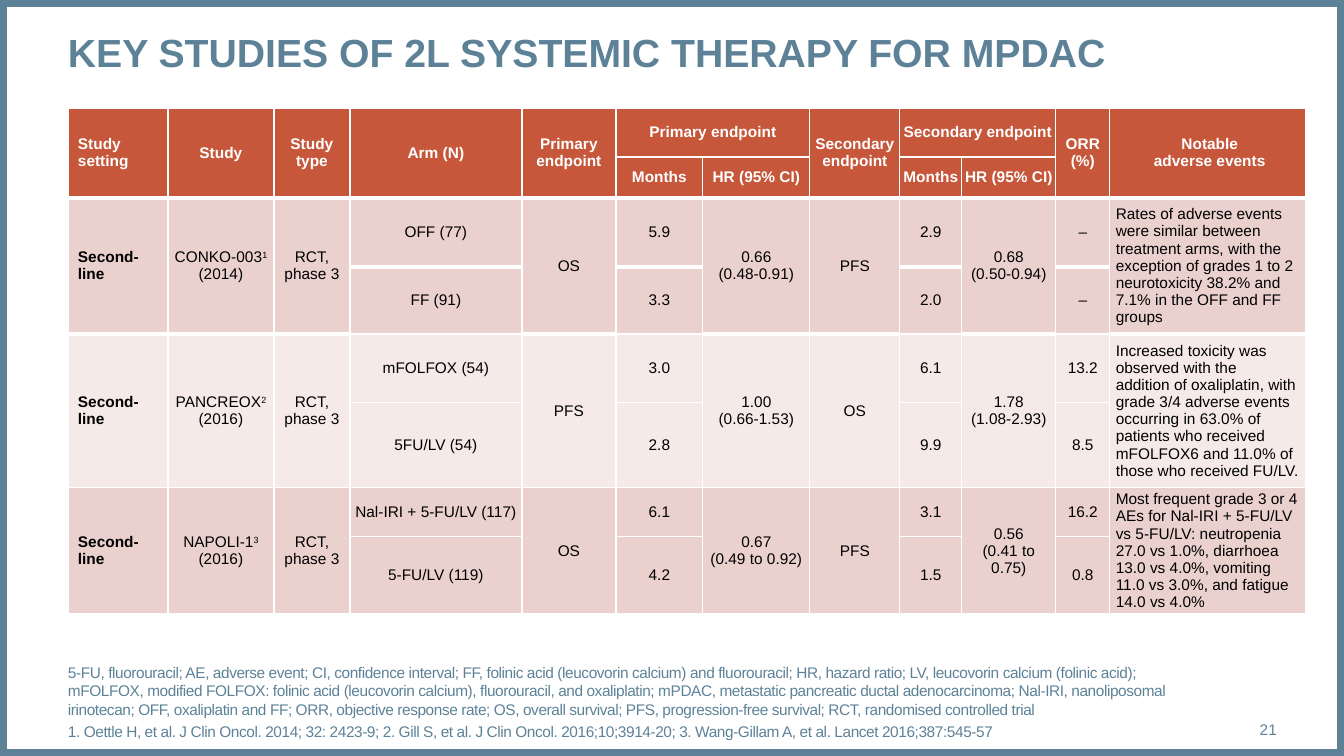
import pptx
import pptx.dml.color
import pptx.enum.shapes
import pptx.enum.text
import pptx.oxml.ns
import pptx.util
from lxml import etree

PX = 914400 / 100.8
COLORS = {"steel": "5D8298", "rust": "C6573B", "rose": "EAD1CE", "blush": "F5EAE8",
          "white": "FFFFFF", "black": "000000"}
FONT = "Arial"
ALIGN = pptx.enum.text.PP_ALIGN
ANCHOR = pptx.enum.text.MSO_ANCHOR

COLUMN_WIDTHS = [100, 106, 76, 172, 94, 87, 107, 90, 62, 94, 54, 196]
ROW_HEIGHTS = [49, 41, 69, 67, 69, 85, 49, 77]
SPLIT_COLUMNS = (3, 5, 8, 10)
HEADER_PAIRS = (5, 8)
HEADER = ["Study setting", "Study", "Study\ntype", "Arm (N)", "Primary\nendpoint",
          "Primary endpoint", "", "Secondary\nendpoint", "Secondary endpoint", "",
          "ORR\n(%)", "Notable\nadverse events"]
SUBHEADER = {5: "Months", 6: "HR (95% CI)", 8: "Months", 9: "HR (95% CI)"}
STUDIES = [
    (["Second-\nline", "CONKO-003^1^\n(2014)", "RCT,\nphase 3", "OFF (77)", "OS", "5.9",
      "0.66|(0.48-0.91)", "PFS", "2.9", "0.68|(0.50-0.94)", "–",
      "Rates of adverse events were similar between|treatment arms, with the exception of "
      "grades 1 to 2 neurotoxicity 38.2% and 7.1% in the OFF and FF groups"],
     ["FF (91)", "3.3", "2.0", "–"]),
    (["Second-\nline", "PANCREOX^2^|(2016)", "RCT,\nphase 3", "mFOLFOX (54)", "PFS", "3.0",
      "1.00|(0.66-1.53)", "OS", "6.1", "1.78|(1.08-2.93)", "13.2",
      "Increased toxicity was observed with the|addition of oxaliplatin, with grade 3/4 "
      "adverse events occurring in 63.0% of patients who received|mFOLFOX6 and 11.0% of "
      "those who received FU/LV."],
     ["5FU/LV (54)", "2.8", "9.9", "8.5"]),
    (["Second-\nline", "NAPOLI-1^3^\n(2016)", "RCT,\nphase 3", "Nal-IRI + 5-FU/LV (117)",
      "OS", "6.1", "0.67\n(0.49 to 0.92)", "PFS", "3.1", "0.56\n(0.41 to 0.75)", "16.2",
      "Most frequent grade 3 or 4 AEs for Nal-IRI + 5-FU/LV vs 5-FU/LV: neutropenia 27.0 vs "
      "1.0%, diarrhoea 13.0 vs 4.0%, vomiting 11.0 vs 3.0%, and fatigue 14.0 vs 4.0%"],
     ["5-FU/LV (119)", "4.2", "1.5", "0.8"]),
]
NOTES = (
    "5-FU, fluorouracil; AE, adverse event; CI, confidence interval; FF, folinic acid "
    "(leucovorin calcium) and fluorouracil; HR, hazard ratio; LV, leucovorin calcium "
    "(folinic acid); mFOLFOX, modified FOLFOX: folinic acid (leucovorin calcium), "
    "fluorouracil, and oxaliplatin; mPDAC, metastatic pancreatic ductal adenocarcinoma; "
    "Nal‑IRI, nanoliposomal irinotecan; OFF, oxaliplatin and FF; ORR, objective response "
    "rate; OS, overall survival; PFS, progression-free survival; RCT, randomised "
    "controlled trial|"
    "1. Oettle H, et al. J Clin Oncol. 2014; 32: 2423-9; 2. Gill S, et al. J Clin Oncol. "
    "2016;10;3914-20; 3. Wang-Gillam A, et al. Lancet 2016;387:545-57")


def px(length):
    return round(length * PX)


def rgb(name):
    return pptx.dml.color.RGBColor.from_string(COLORS[name])


def add_run(paragraph, text, size, color, bold, raised, spacing):
    run = paragraph.add_run()
    run.text = text
    run.font.name = FONT
    run.font.size = pptx.util.Pt(size)
    run.font.bold = bold
    run.font.color.rgb = rgb(color)
    properties = run._r.get_or_add_rPr()
    if raised:
        properties.set("baseline", "30000")
    if spacing:
        properties.set("spc", str(spacing))


def write(frame, text, color, size=11, bold=False, align=ALIGN.LEFT, spacing=0, gap=0):
    for number, line_group in enumerate(text.split("|")):
        paragraph = frame.add_paragraph() if number else frame.paragraphs[0]
        paragraph.alignment = align
        paragraph.space_before = pptx.util.Pt(gap if number else 0)
        for line_number, line in enumerate(line_group.split("\n")):
            if line_number:
                paragraph.add_line_break()
                etree.SubElement(paragraph._p[-1], pptx.oxml.ns.qn("a:rPr"), sz=str(size * 100))
            for part, piece in enumerate(line.split("^")):
                if piece:
                    add_run(paragraph, piece, size, color, bold, part % 2 == 1, spacing)


def prepare_frame(frame, anchor):
    frame.word_wrap = True
    frame.auto_size = pptx.enum.text.MSO_AUTO_SIZE.NONE
    frame.vertical_anchor = anchor
    frame.margin_left = frame.margin_right = frame.margin_top = frame.margin_bottom = 0


def place(shape, box):
    shape.left, shape.top, shape.width, shape.height = map(px, box)


def add_border(slide, box):
    border = slide.shapes.add_shape(pptx.enum.shapes.MSO_SHAPE.RECTANGLE, *map(px, box))
    border.shadow.inherit = False
    border.fill.background()
    border.line.color.rgb = rgb("steel")
    border.line.width = pptx.util.Pt(10)


def add_title(slide, box, text):
    title = slide.shapes.title
    place(title, box)
    prepare_frame(title.text_frame, ANCHOR.TOP)
    write(title.text_frame, text, "steel", 28, True)


def add_text(slide, box, text, anchor, **style):
    text_box = slide.shapes.add_textbox(*map(px, box))
    prepare_frame(text_box.text_frame, anchor)
    write(text_box.text_frame, text, "steel", **style)


def has_thick_bottom(row, column):
    return row in (1, 2) or (row == 3 and column not in SPLIT_COLUMNS)


def set_borders(cell, row, column):
    properties = cell._tc.get_or_add_tcPr()
    last_row = row + cell.span_height - 1 if cell.is_merge_origin else row
    thick = {"T": has_thick_bottom(row - 1, column), "B": has_thick_bottom(last_row, column)}
    for position, side in enumerate("LRTB"):
        width = 3 if thick.get(side) else 1
        line = etree.Element(pptx.oxml.ns.qn("a:ln" + side), w=str(pptx.util.Pt(width)))
        fill = etree.SubElement(line, pptx.oxml.ns.qn("a:solidFill"))
        etree.SubElement(fill, pptx.oxml.ns.qn("a:srgbClr"), val=COLORS["white"])
        properties.insert(position, line)


def format_cell(cell, row, column, text):
    header = row < 2
    last = len(COLUMN_WIDTHS) - 1
    cell.fill.solid()
    cell.fill.fore_color.rgb = rgb("rust" if header else "blush" if row in (4, 5) else "rose")
    cell.vertical_anchor = ANCHOR.MIDDLE
    cell.margin_left = px({0: 10, last: 6}.get(column, 2))
    cell.margin_right = px(2)
    cell.margin_top = cell.margin_bottom = px(3)
    set_borders(cell, row, column)
    if text:
        left = column == 0 or (column == last and not header)
        write(cell.text_frame, text, "white" if header else "black",
              bold=header or column == 0, align=ALIGN.LEFT if left else ALIGN.CENTER)


def table_texts():
    yield dict(enumerate(HEADER))
    yield SUBHEADER
    for first_arm, second_arm in STUDIES:
        yield dict(enumerate(first_arm))
        yield dict(zip(SPLIT_COLUMNS, second_arm))


def add_study_table(slide, left, top):
    box = (left, top, sum(COLUMN_WIDTHS), sum(ROW_HEIGHTS))
    table = slide.shapes.add_table(len(ROW_HEIGHTS), len(COLUMN_WIDTHS), *map(px, box)).table
    for column, width in zip(table.columns, COLUMN_WIDTHS):
        column.width = px(width)
    for row, height in zip(table.rows, ROW_HEIGHTS):
        row.height = px(height)
    for column in HEADER_PAIRS:
        table.cell(0, column).merge(table.cell(0, column + 1))
    for row in range(0, len(ROW_HEIGHTS), 2):
        single = SPLIT_COLUMNS if row else SUBHEADER
        for column in range(len(COLUMN_WIDTHS)):
            if column not in single:
                table.cell(row, column).merge(table.cell(row + 1, column))
    for row, texts in enumerate(table_texts()):
        for column in range(len(COLUMN_WIDTHS)):
            format_cell(table.cell(row, column), row, column, texts.get(column, ""))


def main():
    presentation = pptx.Presentation()
    presentation.slide_width, presentation.slide_height = px(1344), px(756)
    slide = presentation.slides.add_slide(presentation.slide_layouts[5])
    add_border(slide, (0, 0, 1344, 756))
    add_title(slide, (68, 28, 1209, 70), "KEY STUDIES OF 2L SYSTEMIC THERAPY FOR MPDAC")
    add_study_table(slide, 68, 108)
    add_text(slide, (1190, 709, 87, 40), "21", ANCHOR.MIDDLE, align=ALIGN.RIGHT)
    add_text(slide, (68, 663, 1122, 78), NOTES, ANCHOR.BOTTOM, spacing=-30, gap=3)
    presentation.save("out.pptx")


if __name__ == "__main__":
    main()
